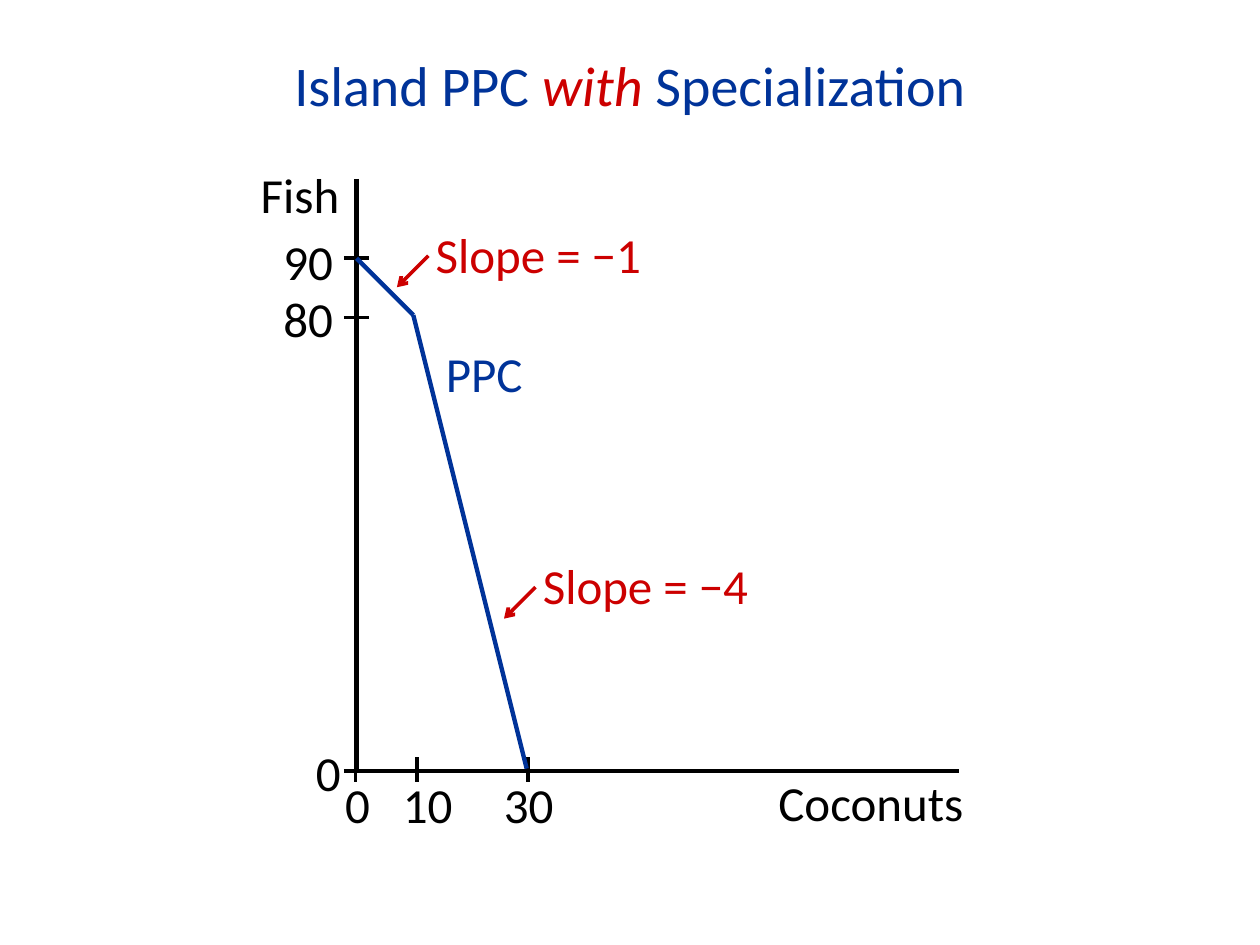
from dataclasses import dataclass

from lxml.etree import SubElement
from pptx import Presentation
from pptx.dml.color import RGBColor
from pptx.enum.shapes import MSO_CONNECTOR
from pptx.enum.text import MSO_ANCHOR, PP_ALIGN
from pptx.oxml.ns import qn
from pptx.util import Inches, Pt


@dataclass(frozen=True)
class Theme:
    font: str = "Calibri"
    black: RGBColor = RGBColor.from_string("000000")
    blue: RGBColor = RGBColor.from_string("003399")
    red: RGBColor = RGBColor.from_string("CC0000")
    title_size: float = 32
    label_size: float = 28
    thin: float = 2
    thick: float = 2.5


@dataclass(frozen=True)
class Box:
    left: float
    top: float
    width: float
    height: float

    def at(self, x, y):
        return Inches(self.left + x), Inches(self.top + y)


THEME = Theme()
LABEL_HEIGHT = 0.57
TICK_HALF = 0.1
UNIT = 0.045


def style_run(run, size, color, italic=False):
    run.font.name = THEME.font
    run.font.size = Pt(size)
    run.font.color.rgb = color
    run.font.italic = italic


def add_label(shapes, box, wording, x, y, width, color=THEME.black):
    label = shapes.add_textbox(*box.at(x, y), Inches(width), Inches(LABEL_HEIGHT))
    label.text_frame.word_wrap = True
    label.text_frame.text = wording
    style_run(label.text_frame.paragraphs[0].runs[0], THEME.label_size, color)


def add_line(shapes, box, start, end, color, weight, arrow=False):
    line = shapes.add_connector(MSO_CONNECTOR.STRAIGHT, *box.at(*start), *box.at(*end))
    line.line.color.rgb = color
    line.line.width = Pt(weight)
    if arrow:
        SubElement(line.line._get_or_add_ln(), qn("a:tailEnd"), type="arrow")
    SubElement(line._element.spPr, qn("a:effectLst"))


def add_title(slide, box):
    title = slide.shapes.title
    title.left, title.top = box.at(0, 0)
    title.width, title.height = Inches(box.width), Inches(box.height)
    title.text_frame.vertical_anchor = MSO_ANCHOR.MIDDLE
    paragraph = title.text_frame.paragraphs[0]
    paragraph.alignment = PP_ALIGN.CENTER
    for wording, color, italic in (
        ("Island PPC ", THEME.blue, False),
        ("with", THEME.red, True),
        (" Specialization", THEME.blue, False),
    ):
        run = paragraph.add_run()
        run.text = wording
        style_run(run, THEME.title_size, color, italic)


def add_fish_tick(shapes, box, wording, y, label_x, label_y, label_width):
    add_line(shapes, box, (-TICK_HALF, y), (TICK_HALF, y), THEME.black, THEME.thin)
    add_label(shapes, box, wording, label_x, label_y, label_width)


def add_coconut_tick(shapes, box, wording, x, label_x, label_width):
    middle = box.height - 0.01
    add_line(shapes, box, (x, middle - TICK_HALF), (x, middle + TICK_HALF),
             THEME.black, THEME.thin)
    add_label(shapes, box, wording, label_x, box.height - 0.02, label_width)


def add_axes(slide, box):
    axes = slide.shapes.add_group_shape().shapes
    origin = (0, box.height)
    add_line(axes, box, (0, 0), origin, THEME.black, THEME.thick)
    add_line(axes, box, origin, (box.width, box.height), THEME.black, THEME.thick)
    add_label(axes, box, "Fish", -0.86, -0.16, 1.12)
    add_label(axes, box, "Coconuts", 3.25, box.height - 0.04, 1.95)
    add_fish_tick(axes, box, "0", box.height, -0.42, 4.42, 0.33)
    add_coconut_tick(axes, box, "0", -0.01, -0.19, 0.33)

    add_fish_tick(slide.shapes, box, "90", 0.63, -0.68, 0.37, 0.68)
    add_fish_tick(slide.shapes, box, "80", 1.1, -0.68, 0.82, 0.68)
    add_coconut_tick(slide.shapes, box, "10", 0.48, 0.27, 0.77)
    add_coconut_tick(slide.shapes, box, "30", 1.36, 1.07, 0.79)


def add_slope(shapes, box, wording, x, y, width):
    add_label(shapes, box, wording, x, y, width, THEME.red)
    add_line(shapes, box, (x + 0.04, y + 0.3), (x - 0.21, y + 0.55),
             THEME.red, THEME.thin, arrow=True)


def add_curve(slide, box):
    output = ((0, 90), (10, 80), (30, 0))
    points = [(coconuts * UNIT, box.height - 0.02 - fish * UNIT)
              for coconuts, fish in output]
    for start, end in zip(points, points[1:]):
        add_line(slide.shapes, box, start, end, THEME.blue, THEME.thick)
    add_label(slide.shapes, box, "PPC", 0.61, 1.26, 1, THEME.blue)
    add_slope(slide.shapes, box, "Slope = −1", 0.53, 0.31, 2.33)
    add_slope(slide.shapes, box, "Slope = −4", 1.38, 2.94, 1.86)


def main():
    deck = Presentation()
    deck.slide_width, deck.slide_height = Inches(10), Inches(7.5)
    slide = deck.slides.add_slide(deck.slide_layouts.get_by_name("Title Only"))
    plot = Box(2.83, 1.42, 4.78, 4.7)
    add_title(slide, Box(0.7, 0.35, 8.6, 0.64))
    add_axes(slide, plot)
    add_curve(slide, plot)
    deck.save("out.pptx")


if __name__ == "__main__":
    main()
